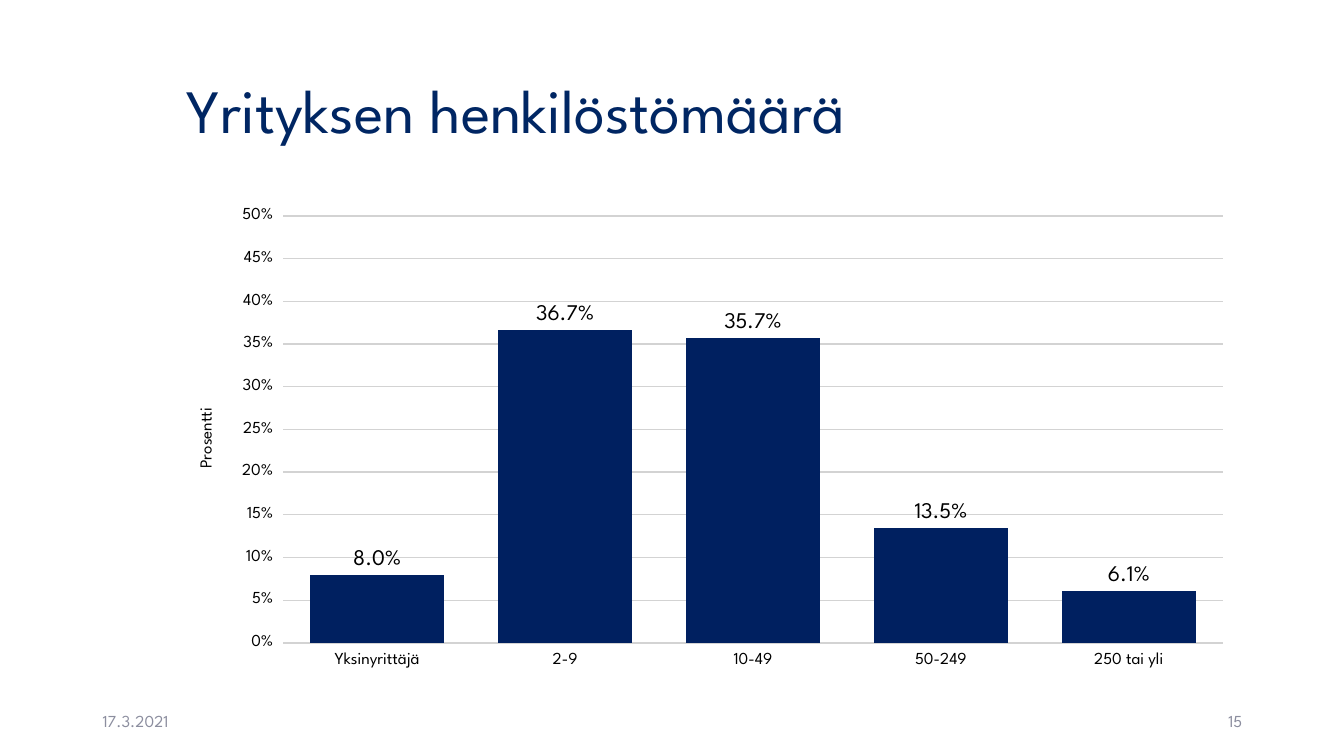
import pptx
import pptx.util
import pptx.chart.data
import pptx.enum.chart
import pptx.enum.text
import pptx.dml.color
import pptx.oxml
import pptx.oxml.ns

Inches, Pt = pptx.util.Inches, pptx.util.Pt
RGB = pptx.dml.color.RGBColor.from_string
ALIGN = pptx.enum.text.PP_ALIGN
MIDDLE = pptx.enum.text.MSO_ANCHOR.MIDDLE
FACE = "League Spartan"
COLORS = {"title": "002663", "bar": "002060", "grid": "D3D3D3",
          "text": "000000", "foot": "8C8E9F", "plot": "FFFFFF"}


def style(font, size, color):
    font.name = FACE
    font.size = Pt(size)
    font.bold = False
    font.color.rgb = RGB(COLORS[color])


def write(frame, text, size, color, align):
    """Put one styled run in the frame, centred vertically."""
    frame.word_wrap = True
    frame.vertical_anchor = MIDDLE
    para = frame.paragraphs[0]
    para.alignment = align
    run = para.add_run()
    run.text = text
    style(run.font, size, color)
    return para


deck = pptx.Presentation()
deck.slide_width, deck.slide_height = Inches(13.33), Inches(7.5)
slide = deck.slides.add_slide(deck.slide_layouts[5])

# Title
title = slide.shapes.title
title.left, title.top = Inches(1.75), Inches(0.4)
title.width, title.height = Inches(10.59), Inches(1.45)
para = write(title.text_frame, "Yrityksen henkilöstömäärä", 44, "title", ALIGN.LEFT)
para.line_spacing = 0.9

# Footer
for left, text, align in ((0.92, "17.3.2021", ALIGN.LEFT), (9.42, "15", ALIGN.RIGHT)):
    box = slide.shapes.add_textbox(Inches(left), Inches(6.95), Inches(3), Inches(0.4))
    write(box.text_frame, text, 12, "foot", align)

# Chart
data = pptx.chart.data.CategoryChartData(number_format="0.0%")
data.categories = ["Yksinyrittäjä", "2-9", "10-49", "50-249", "250 tai yli"]
data.add_series("Series 1", (0.08, 0.367, 0.357, 0.135, 0.061))
chart = slide.shapes.add_chart(
    pptx.enum.chart.XL_CHART_TYPE.COLUMN_CLUSTERED,
    Inches(1.75), Inches(2), Inches(10.59), Inches(4.76), data).chart
chart.has_title = False
chart.has_legend = False
style(chart.font, 11, "text")

plot = chart.plots[0]
plot.gap_width = 40
plot.vary_by_categories = False
bars = plot.series[0]
bars.format.fill.solid()
bars.format.fill.fore_color.rgb = RGB(COLORS["bar"])
labels = bars.data_labels
labels.show_value = True
labels.number_format = "0.0%"
labels.number_format_is_linked = False
labels.position = pptx.enum.chart.XL_LABEL_POSITION.OUTSIDE_END
style(labels.font, 16, "text")

# Axes
for axis in (chart.category_axis, chart.value_axis):
    axis.major_tick_mark = pptx.enum.chart.XL_TICK_MARK.OUTSIDE
    axis.format.line.fill.background()
    style(axis.tick_labels.font, 12, "text")
scale = chart.value_axis
scale.minimum_scale, scale.maximum_scale, scale.major_unit = 0, 0.5, 0.05
scale.tick_labels.number_format = "0%"
scale.tick_labels.number_format_is_linked = False
scale.has_major_gridlines = True
grid = scale.major_gridlines.format.line
grid.color.rgb = RGB(COLORS["grid"])
grid.width = Pt(1)
run = scale.axis_title.text_frame.paragraphs[0].add_run()
run.text = "Prosentti"
style(run.font, 12, "text")

# Plot area position and fill
area = chart._chartSpace.chart.plotArea
for old in area.findall(pptx.oxml.ns.qn("c:layout")):
    area.remove(old)
sides = "".join(f'<c:{key} val="{val}"/>' for key, val in (
    ("layoutTarget", "inner"), ("xMode", "edge"), ("yMode", "edge"),
    ("x", 0.1), ("y", 0.03), ("w", 0.88), ("h", 0.89)))
names = pptx.oxml.ns.nsdecls("c", "a")
area.insert(0, pptx.oxml.parse_xml(
    f"<c:layout {names}><c:manualLayout>{sides}</c:manualLayout></c:layout>"))
area.append(pptx.oxml.parse_xml(
    f'<c:spPr {names}><a:solidFill><a:srgbClr val="{COLORS["plot"]}"/>'
    "</a:solidFill></c:spPr>"))

deck.save("out.pptx")
